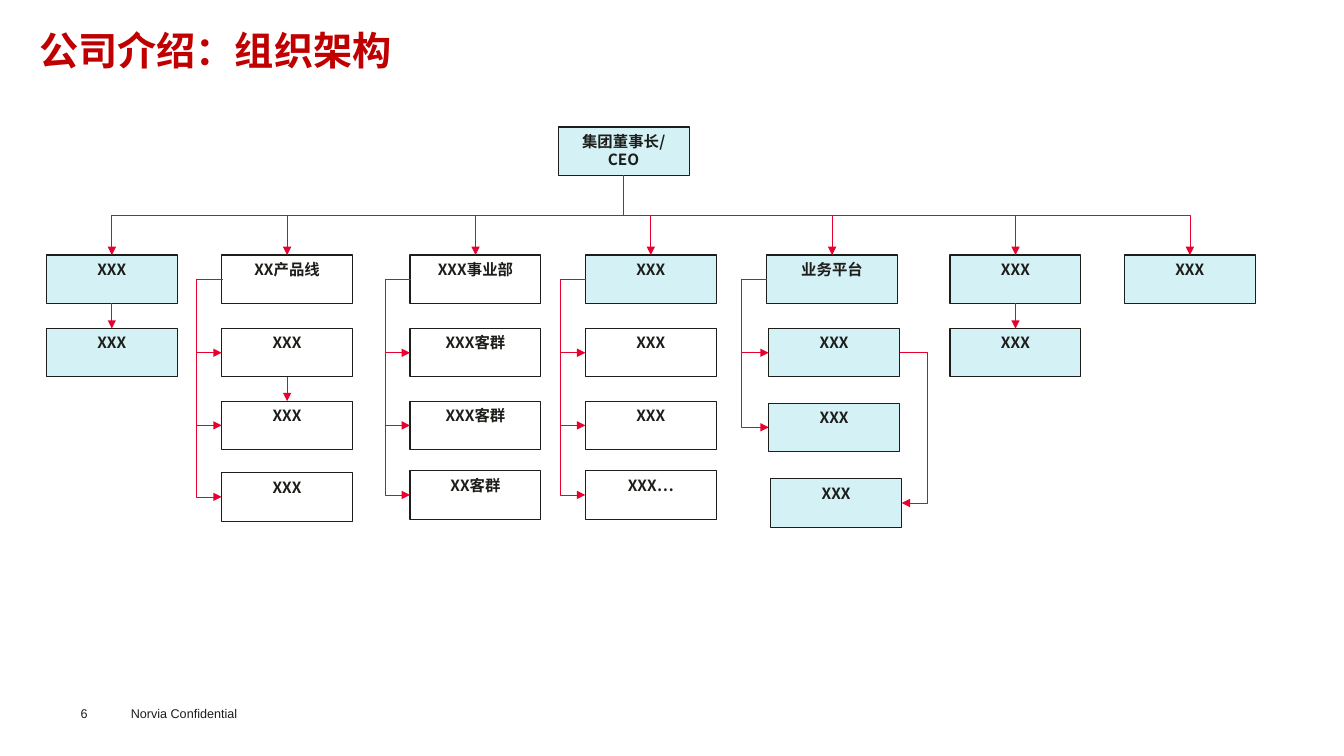
import pptx
import pptx.util
from lxml import etree
from pptx.dml.color import RGBColor
from pptx.enum.shapes import MSO_CONNECTOR, MSO_SHAPE
from pptx.enum.text import MSO_ANCHOR, MSO_AUTO_SIZE, PP_ALIGN
from pptx.oxml.ns import qn
from pptx.util import Inches, Pt

CJK, LATIN = "Noto Sans CJK SC", "Arial"
TITLE_RED = RGBColor(0xC0, 0x00, 0x00)
LINE_RED = RGBColor(0xE9, 0x00, 0x2F)
CYAN = RGBColor(0xD4, 0xF1, 0xF5)
INK = RGBColor(0x1D, 0x1D, 0x1A)
GREY = RGBColor(0x1D, 0x1D, 0x1B)

TITLE = "公司介绍：组织架构"
FOOTER, PAGE = "Norvia Confidential", "6"
CEO = ("集团董事长/CEO", 5.54, 1.26, CYAN)

BOX_W, BOX_H = 1.3, 0.48
RAIL_GAP = 0.25
ROW_1, ROW_2, ROW_3, ROW_4 = 2.53, 3.26, 3.98, 4.67

# Each column: boxes from top to bottom as (text, left, top, fill),
# children hung on the left rail, pairs joined by a straight arrow
COLUMNS = [
    ([("XXX", 0.46, ROW_1, CYAN), ("XXX", 0.46, ROW_2, CYAN)], [], [(0, 1)]),
    ([("XX产品线", 2.2, ROW_1, None), ("XXX", 2.2, ROW_2, None),
      ("XXX", 2.2, ROW_3, None), ("XXX", 2.2, 4.69, None)], [1, 2, 3], [(1, 2)]),
    ([("XXX事业部", 4.07, ROW_1, None), ("XXX客群", 4.07, ROW_2, None),
      ("XXX客群", 4.07, ROW_3, None), ("XX客群", 4.07, ROW_4, None)], [1, 2, 3], []),
    ([("XXX", 5.81, ROW_1, CYAN), ("XXX", 5.81, ROW_2, None),
      ("XXX", 5.81, ROW_3, None), ("XXX…", 5.81, ROW_4, None)], [1, 2, 3], []),
    ([("业务平台", 7.61, ROW_1, CYAN), ("XXX", 7.63, ROW_2, CYAN),
      ("XXX", 7.63, 4, CYAN), ("XXX", 7.65, 4.75, CYAN)], [1, 2], []),
    ([("XXX", 9.43, ROW_1, CYAN), ("XXX", 9.43, ROW_2, CYAN)], [], [(0, 1)]),
    ([("XXX", 11.16, ROW_1, CYAN)], [], []),
]
PLATFORM = 4  # column whose second box also leads to its last one


def style(p, face, size, color, bold=False):
    f = p.font
    f.name, f.size, f.bold = face, Pt(size), bold
    f.color.rgb = color
    latin = p._p.pPr.find(qn("a:defRPr")).find(qn("a:latin"))
    ea = etree.Element(qn("a:ea"), typeface=face)
    latin.addnext(ea)


def add_box(text, left, top, fill):
    sp = slide.shapes.add_shape(MSO_SHAPE.RECTANGLE, Inches(left), Inches(top),
                                Inches(BOX_W), Inches(BOX_H))
    sp.shadow.inherit = False
    if fill is None:
        sp.fill.background()
    else:
        sp.fill.solid()
        sp.fill.fore_color.rgb = fill
    sp.line.color.rgb = INK
    sp.line.width = Pt(0.75)
    tf = sp.text_frame
    tf.word_wrap = True
    tf.vertical_anchor = MSO_ANCHOR.TOP
    p = tf.paragraphs[0]
    p.text = text
    p.alignment = PP_ALIGN.CENTER
    style(p, CJK, 11, INK, True)
    return sp


def add_arrow(kind, x1, y1, x2, y2):
    c = slide.shapes.add_connector(kind, Inches(x1), Inches(y1), Inches(x2), Inches(y2))
    c.line.color.rgb = LINE_RED
    c.line.width = Pt(0.5)
    etree.SubElement(c.line._get_or_add_ln(), qn("a:tailEnd"), type="triangle")
    etree.SubElement(c._element.spPr, qn("a:effectLst"))
    return c


def add_branch(x1, y1, x2, y2):
    """Elbow that leaves downwards: a sideways elbow turned a quarter."""
    run, drop = abs(x2 - x1), y2 - y1
    left = (x1 + x2 - drop) / 2
    top = (y1 + y2 - run) / 2
    c = add_arrow(MSO_CONNECTOR.ELBOW, left, top, left + drop, top + run)
    xfrm = c._element.spPr.find(qn("a:xfrm"))
    xfrm.set("rot", str((90 if x2 < x1 else 270) * 60000))
    if x2 > x1:
        xfrm.set("flipH", "1")


def add_rail(x1, y1, x2, y2, rail):
    """Elbow whose vertical part runs at x = rail, outside both ends."""
    c = add_arrow(MSO_CONNECTOR.ELBOW, x1, y1, x2, y2)
    geom = c._element.spPr.find(qn("a:prstGeom"))
    av = geom.find(qn("a:avLst"))
    if av is None:
        av = etree.SubElement(geom, qn("a:avLst"))
    adj = round((rail - x1) / (x2 - x1) * 100000)
    etree.SubElement(av, qn("a:gd"), name="adj1", fmla=f"val {adj}")


def add_label(text, left, top, width, height, inset):
    tf = slide.shapes.add_textbox(Inches(left), Inches(top),
                                  Inches(width), Inches(height)).text_frame
    tf.word_wrap = True
    if not inset:
        tf.margin_left = tf.margin_right = tf.margin_top = tf.margin_bottom = 0
    p = tf.paragraphs[0]
    p.text = text
    style(p, LATIN, 9, GREY)


prs = pptx.Presentation()
prs.slide_width, prs.slide_height = Inches(13.34), Inches(7.5)
slide = prs.slides.add_slide(prs.slide_layouts[5])

title = slide.shapes.title
title.left, title.top, title.width, title.height = map(Inches, (0.39, 0, 12.95, 0.98))
tf = title.text_frame
tf.margin_left = tf.margin_right = tf.margin_top = tf.margin_bottom = 0
tf.vertical_anchor = MSO_ANCHOR.MIDDLE
tf.auto_size = MSO_AUTO_SIZE.NONE
p = tf.paragraphs[0]
p.text = TITLE
p.alignment = PP_ALIGN.LEFT
p.line_spacing = Pt(34.3)
style(p, CJK, 28, TITLE_RED, True)

add_label(FOOTER, 1.2, 6.95, 1.6, 0.25, True)
add_label(PAGE, 0.8, 7, 0.55, 0.15, False)

add_box(*CEO)
ceo_x, ceo_bottom = CEO[1] + BOX_W / 2, CEO[2] + BOX_H

for boxes, hung, joined in COLUMNS:
    shapes = [add_box(*box) for box in boxes]
    _, left, top, _ = boxes[0]
    add_branch(ceo_x, ceo_bottom, left + BOX_W / 2, top)
    for i in hung:
        _, child_left, child_top, _ = boxes[i]
        start = left if left != child_left else left + 0.01
        add_rail(start, top + BOX_H / 2, child_left, child_top + BOX_H / 2,
                 left - RAIL_GAP)
    for upper, lower in joined:
        x = left + BOX_W / 2
        c = add_arrow(MSO_CONNECTOR.STRAIGHT, x, boxes[upper][2] + BOX_H,
                      x, boxes[lower][2])
        c.begin_connect(shapes[upper], 2)
        c.end_connect(shapes[lower], 0)

_, second, _, last = COLUMNS[PLATFORM][0]
add_rail(second[1] + BOX_W, second[2] + BOX_H / 2, last[1] + BOX_W,
         last[2] + BOX_H / 2, last[1] + BOX_W + RAIL_GAP)

prs.save("out.pptx")
